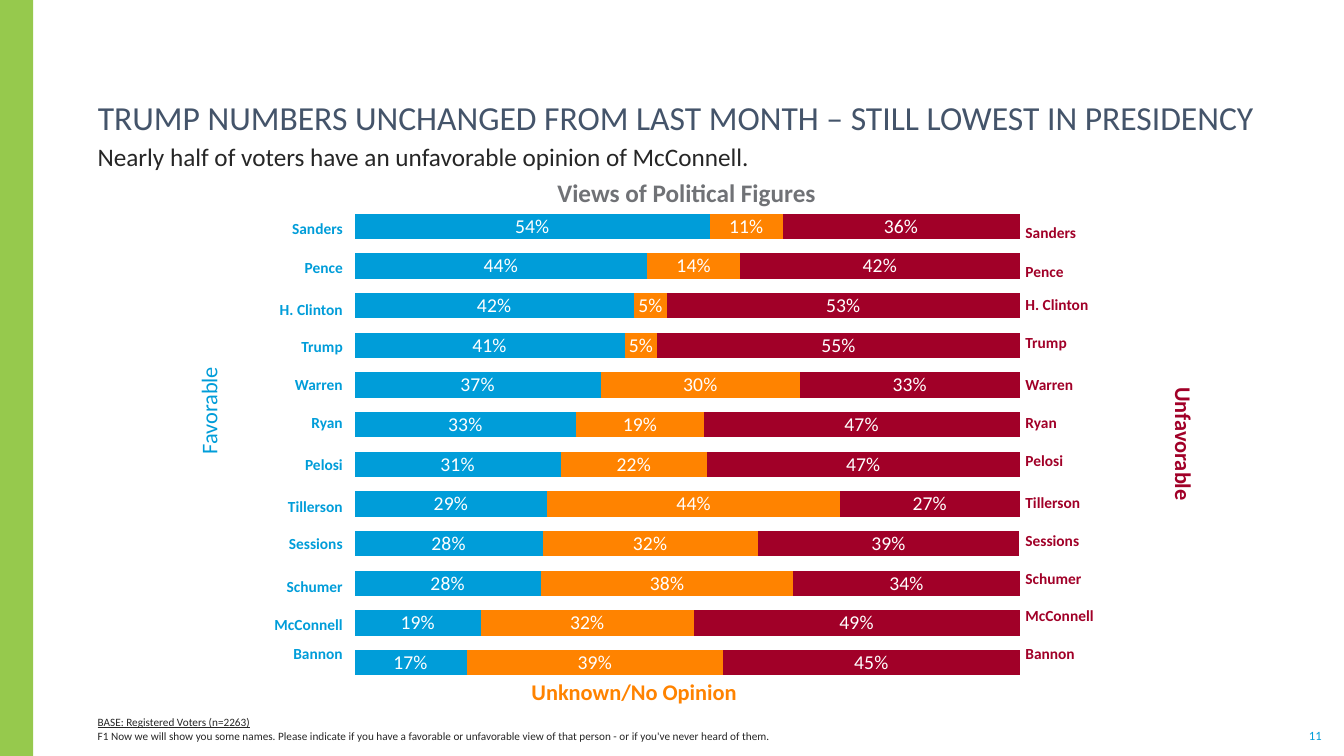
from dataclasses import dataclass

from lxml.etree import SubElement
from pptx import Presentation
from pptx.chart.data import CategoryChartData
from pptx.dml.color import RGBColor
from pptx.enum.chart import XL_CHART_TYPE, XL_LABEL_POSITION
from pptx.enum.shapes import MSO_SHAPE
from pptx.enum.text import MSO_ANCHOR, MSO_AUTO_SIZE, PP_ALIGN
from pptx.oxml.ns import qn
from pptx.util import Inches, Pt


@dataclass(frozen=True)
class Theme:
    font: str = "Calibri"
    favorable: str = "009DD9"
    unknown: str = "FF8300"
    unfavorable: str = "A10028"
    accent: str = "96C94D"
    title: str = "44546A"
    body: str = "262626"
    heading: str = "707276"
    white: str = "FFFFFF"
    title_size: int = 24
    lead_size: int = 18
    caption_size: int = 16
    value_size: int = 14
    name_size: int = 11
    number_size: int = 9
    note_size: int = 8


THEME = Theme()

FIGURES = ["Sanders", "Pence", "H. Clinton", "Trump", "Warren", "Ryan", "Pelosi",
           "Tillerson", "Sessions", "Schumer", "McConnell", "Bannon"]

# Shares run from the bottom bar to the top bar
SHARES = [
    (THEME.favorable, [0.17, 0.19, 0.28, 0.28, 0.29, 0.31, 0.33, 0.37, 0.41, 0.42, 0.44, 0.54]),
    (THEME.unknown, [0.39, 0.32, 0.38, 0.32, 0.44, 0.22, 0.19, 0.3, 0.05, 0.05, 0.14, 0.11]),
    (THEME.unfavorable, [0.45, 0.49, 0.34, 0.39, 0.27, 0.47, 0.47, 0.33, 0.55, 0.53, 0.42, 0.36]),
]

LEFT_ROWS = [0.36, 0.41, 0.42, 0.33, 0.42, 0.33, 0.5, 0.33, 0.42, 0.42, 0.33, 0.25]
RIGHT_ROWS = [0.44, 0.33, 0.33, 0.42, 0.42, 0.33, 0.42, 0.42, 0.33, 0.42, 0.33, 0.42]


def style_font(font, size, color, bold=False):
    font.name = THEME.font
    font.size = Pt(size)
    font.bold = bold
    font.color.rgb = RGBColor.from_string(color)


def fill_text(frame, text, size, color, bold=False, align=PP_ALIGN.LEFT, anchor=MSO_ANCHOR.TOP):
    frame.text = text
    frame.word_wrap = True
    frame.vertical_anchor = anchor
    for para in frame.paragraphs:
        para.alignment = align
        for span in para.runs:
            style_font(span.font, size, color, bold)


def set_insets(frame, side, top, bottom=0.0):
    frame.margin_left = frame.margin_right = Inches(side)
    frame.margin_top, frame.margin_bottom = Inches(top), Inches(bottom)


def add_text(page, place, text, size, color, **options):
    box = page.shapes.add_textbox(*map(Inches, place))
    fill_text(box.text_frame, text, size, color, **options)
    return box


def add_caption(page, place, text, color, bold=True, rotation=0):
    box = add_text(page, place, text, THEME.caption_size, color, bold=bold, align=PP_ALIGN.CENTER)
    box.text_frame.paragraphs[0].line_spacing = Pt(35)
    box.rotation = rotation


def add_title(page, text):
    title = page.shapes.title
    title.left, title.top, title.width, title.height = map(Inches, (0.87, 0.74, 11.91, 0.62))
    frame = title.text_frame
    fill_text(frame, text, THEME.title_size, THEME.title, anchor=MSO_ANCHOR.BOTTOM)
    set_insets(frame, 0.1, 0)
    frame.auto_size = MSO_AUTO_SIZE.NONE
    frame.paragraphs[0].line_spacing = 0.85


def add_names(page, left, row_heights, color, align):
    frame = page.shapes.add_table(len(FIGURES), 1, Inches(left), Inches(2.09),
                                  Inches(0.81), Inches(sum(row_heights)))
    table = frame.table
    table.first_row = table.horz_banding = False
    for row, name, height in zip(table.rows, FIGURES, row_heights):
        row.height = Inches(height)
        cell = row.cells[0]
        cell.fill.background()
        set_insets(cell, 0.01, 0.01)
        cell.vertical_anchor = MSO_ANCHOR.MIDDLE
        fill_text(cell.text_frame, name, THEME.name_size, color, bold=True, align=align)


def set_plot_area(chart, x, y, w, h):
    plot_area = chart.element.find(".//" + qn("c:plotArea"))
    layout = plot_area.find(qn("c:layout"))
    if layout is None:
        layout = SubElement(plot_area, qn("c:layout"))
        plot_area.insert(0, layout)
    manual = SubElement(layout, qn("c:manualLayout"))
    settings = [("layoutTarget", "inner"), ("xMode", "edge"), ("yMode", "edge"),
                ("x", x), ("y", y), ("w", w), ("h", h)]
    for tag, value in settings:
        SubElement(manual, qn("c:" + tag)).set("val", str(value))


def add_views_chart(page):
    data = CategoryChartData(number_format="0%")
    data.categories = [str(number) for number in range(1, len(FIGURES) + 1)]
    for number, (_, values) in enumerate(SHARES, 1):
        data.add_series(f"Series {number}", values)
    place = map(Inches, (3.38, 1.95, 6.87, 4.92))
    chart = page.shapes.add_chart(XL_CHART_TYPE.BAR_STACKED_100, *place, data).chart
    chart.has_legend = chart.has_title = False
    style_font(chart.font, 10, "5F5F5F")
    chart.value_axis.maximum_scale = 1
    chart.value_axis.has_major_gridlines = False
    chart.value_axis.visible = chart.category_axis.visible = False
    set_plot_area(chart, 0.02, 0.02, 0.96, 0.96)

    plot = chart.plots[0]
    plot.gap_width, plot.overlap = 57, 100
    plot.vary_by_categories = False
    for series, (color, _) in zip(plot.series, SHARES):
        series.format.fill.solid()
        series.format.fill.fore_color.rgb = RGBColor.from_string(color)
        labels = series.data_labels
        labels.show_value = True
        labels.position = XL_LABEL_POSITION.CENTER
        labels.number_format = "0%"
        labels.number_format_is_linked = False
        style_font(labels.font, THEME.value_size, THEME.white)


def add_side_band(page):
    band = page.shapes.add_shape(MSO_SHAPE.RECTANGLE, 0, 0, Inches(0.33), Inches(7.5))
    band.shadow.inherit = False
    band.fill.solid()
    band.fill.fore_color.rgb = RGBColor.from_string(THEME.accent)
    band.line.fill.background()


def add_footnote(page):
    box = add_text(page, (0.87, 6.97, 11.91, 0.4),
                   "BASE: Registered Voters (n=2263)\n"
                   "F1 Now we will show you some names. Please indicate if you have a favorable "
                   "or unfavorable view of that person - or if you've never heard of them.",
                   THEME.note_size, THEME.body, anchor=MSO_ANCHOR.BOTTOM)
    set_insets(box.text_frame, 0.1, 0)
    base, question = box.text_frame.paragraphs
    base.runs[0].font.underline = True
    question.space_before = Pt(0.6)


def main():
    deck = Presentation()
    deck.slide_width, deck.slide_height = Inches(13.33), Inches(7.5)
    page = deck.slides.add_slide(deck.slide_layouts[5])

    # Frame: band, page number, title and lead
    add_side_band(page)
    number = add_text(page, (12.97, 7.22, 0.15, 0.15), "11", THEME.number_size, THEME.favorable,
                      align=PP_ALIGN.CENTER, anchor=MSO_ANCHOR.MIDDLE)
    set_insets(number.text_frame, 0, 0)
    number.text_frame.word_wrap = False
    add_title(page, "TRUMP NUMBERS UNCHANGED FROM LAST MONTH – STILL LOWEST IN PRESIDENCY")
    lead = add_text(page, (0.87, 1.4, 11.9, 0.34),
                    "Nearly half of voters have an unfavorable opinion of McConnell.",
                    THEME.lead_size, THEME.body)
    set_insets(lead.text_frame, 0.1, 0)
    add_footnote(page)

    # Chart with its heading and captions
    add_views_chart(page)
    add_caption(page, (10.84, 4.11, 2.02, 0.59), "Unfavorable", THEME.unfavorable, rotation=90)
    add_caption(page, (4.83, 6.46, 2.92, 0.59), "Unknown/No Opinion", THEME.unknown)
    add_text(page, (3.53, 1.71, 6.56, 0.4), "Views of Political Figures",
             THEME.lead_size, THEME.heading, bold=True, align=PP_ALIGN.CENTER)
    add_caption(page, (0.95, 3.78, 2.02, 0.59), "Favorable", THEME.favorable,
                bold=False, rotation=270)

    # Names on both sides of the bars
    add_names(page, 10.16, RIGHT_ROWS, THEME.unfavorable, PP_ALIGN.LEFT)
    add_names(page, 2.6, LEFT_ROWS, THEME.favorable, PP_ALIGN.RIGHT)

    deck.save("out.pptx")


if __name__ == "__main__":
    main()
